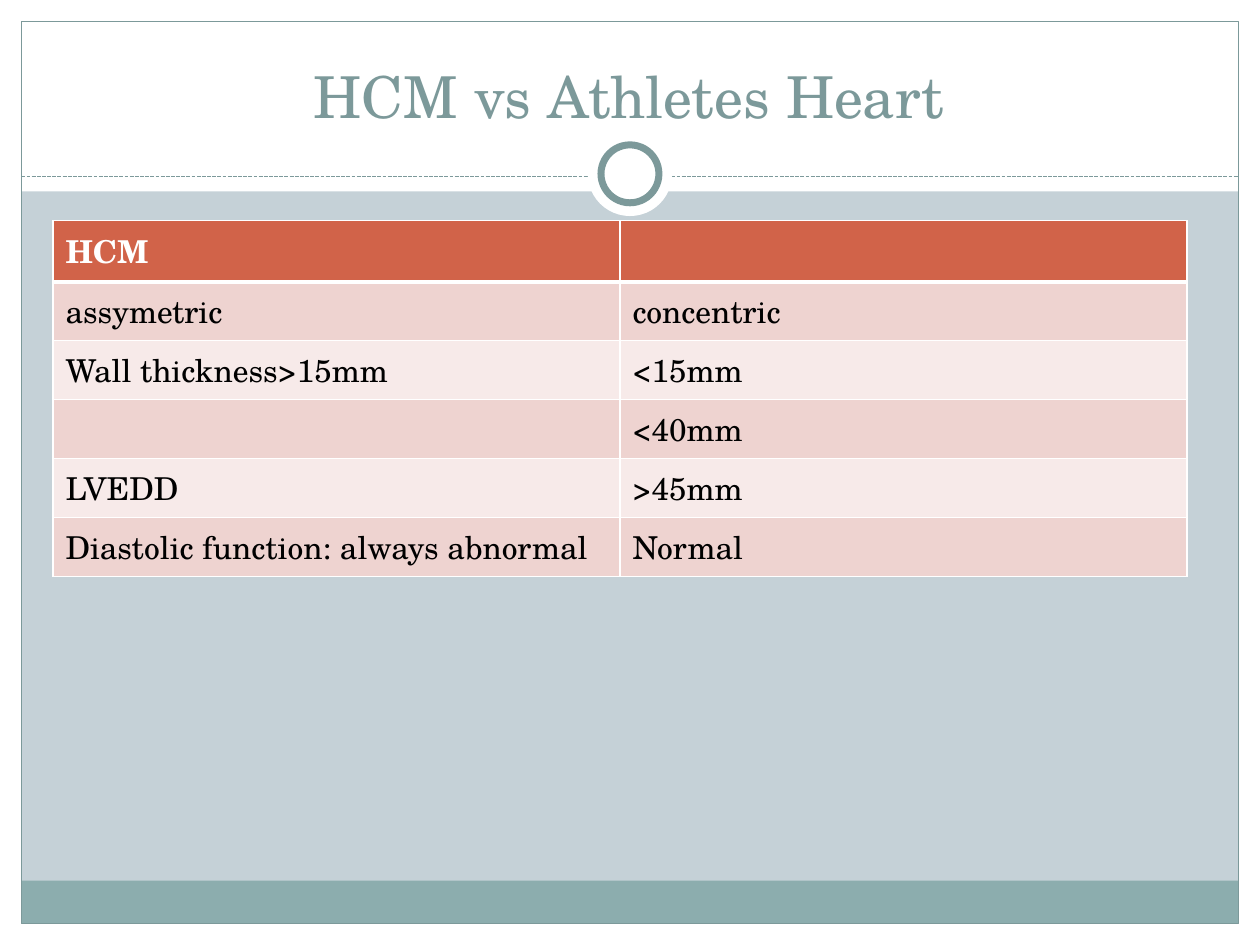
from lxml.etree import SubElement
from pptx import Presentation
from pptx.dml.color import RGBColor
from pptx.enum.dml import MSO_LINE_DASH_STYLE as DASH
from pptx.enum.shapes import MSO_CONNECTOR as CONN, MSO_SHAPE as SHAPE
from pptx.enum.text import MSO_ANCHOR as ANCHOR, MSO_AUTO_SIZE as AUTO, PP_ALIGN as ALIGN
from pptx.oxml.ns import qn
from pptx.util import Inches, Pt

W, H = 10, 7.5
EDGE = 0.17
FONT = "TeX Gyre Schola"
COLORS = {
    "back": "C5D1D7", "white": "FFFFFF", "black": "000000", "teal": "7C999A",
    "footer": "8CADAE", "header": "D16349", "odd": "EED3D0", "even": "F7EAE9",
}
ROWS = [
    ("HCM", ""),
    ("assymetric", "concentric"),
    ("Wall thickness>15mm", "<15mm"),
    ("", "<40mm"),
    ("LVEDD", ">45mm"),
    ("Diastolic function: always abnormal", "Normal"),
]


def rgb(name):
    return RGBColor.from_string(COLORS[name])


class Deck:
    def __init__(self):
        self.prs = Presentation()
        self.prs.slide_width, self.prs.slide_height = Inches(W), Inches(H)
        self.s = self.prs.slides.add_slide(self.prs.slide_layouts[5])
        fill = self.s.background.fill
        fill.solid()
        fill.fore_color.rgb = rgb("back")

    def shape(self, kind, box, fill=None, line=None, width=0.75):
        sp = self.s.shapes.add_shape(kind, *map(Inches, box))
        sp.shadow.inherit = False
        if fill:
            sp.fill.solid()
            sp.fill.fore_color.rgb = rgb(fill)
        else:
            sp.fill.background()
        if line:
            sp.line.color.rgb = rgb(line)
            sp.line.width = Pt(width)
        else:
            sp.line.fill.background()

    def circle(self, cx, cy, size, **style):
        self.shape(SHAPE.OVAL, (cx - size / 2, cy - size / 2, size, size), **style)

    def rule(self, y):
        ln = self.s.shapes.add_connector(
            CONN.STRAIGHT, *map(Inches, (EDGE, y, W - EDGE, y)))
        ln.line.color.rgb = rgb("teal")
        ln.line.width = Pt(0.75)
        ln.line.dash_style = DASH.SQUARE_DOT
        SubElement(ln._element.spPr, qn("a:effectLst"))

    def text(self, p, text, size, color, bold=False):
        r = p.add_run()
        r.text = text
        r.font.name, r.font.size, r.font.bold = FONT, Pt(size), bold
        r.font.color.rgb = rgb(color)

    def title(self, text, box):
        sp = self.s.shapes.title
        sp.left, sp.top, sp.width, sp.height = map(Inches, box)
        self.s.shapes._spTree.append(sp._element)
        tf = sp.text_frame
        tf.word_wrap, tf.auto_size = True, AUTO.NONE
        tf.vertical_anchor = ANCHOR.BOTTOM
        p = tf.paragraphs[0]
        p.alignment = ALIGN.CENTER
        self.text(p, text, 33, "teal")

    def borders(self, cell, top, bottom):
        tcPr = cell._tc.get_or_add_tcPr()
        for side, width in (("L", 1), ("R", 1), ("T", top), ("B", bottom)):
            ln = SubElement(tcPr, qn(f"a:ln{side}"), w=str(Pt(width)))
            fill = SubElement(ln, qn("a:solidFill"))
            SubElement(fill, qn("a:srgbClr"), val=COLORS["white"])

    def table(self, rows, box):
        frame = self.s.shapes.add_table(len(rows), len(rows[0]), *map(Inches, box))
        for i, row in enumerate(rows):
            head = i == 0
            shade = "header" if head else "odd" if i % 2 else "even"
            for j, text in enumerate(row):
                cell = frame.table.cell(i, j)
                self.borders(cell, 3 if i == 1 else 1, 3 if head else 1)
                cell.fill.solid()
                cell.fill.fore_color.rgb = rgb(shade)
                if text:
                    self.text(cell.text_frame.paragraphs[0], text, 18,
                              "white" if head else "black", head)


def main():
    deck = Deck()
    inner = W - 2 * EDGE
    for box in ((0, H - EDGE, W, EDGE), (0, 0, W, 1.52),
                (0, 0, EDGE, H), (W - EDGE, 0, EDGE, H)):
        deck.shape(SHAPE.RECTANGLE, box, fill="white")
    deck.shape(SHAPE.RECTANGLE, (EDGE, 6.99, inner, 0.34), fill="footer")
    deck.shape(SHAPE.RECTANGLE, (EDGE, EDGE, inner, H - 2 * EDGE), line="teal")
    deck.rule(1.4)
    deck.circle(W / 2, 1.38, 0.67, fill="white")
    deck.circle(W / 2, 1.38, 0.46, fill="white", line="teal", width=4)
    deck.title("HCM vs Athletes Heart", (0.33, 0.25, 9.33, 0.83))
    deck.table(ROWS, (0.42, 1.75, 9, 2.43))
    deck.prs.save("out.pptx")


if __name__ == "__main__":
    main()
